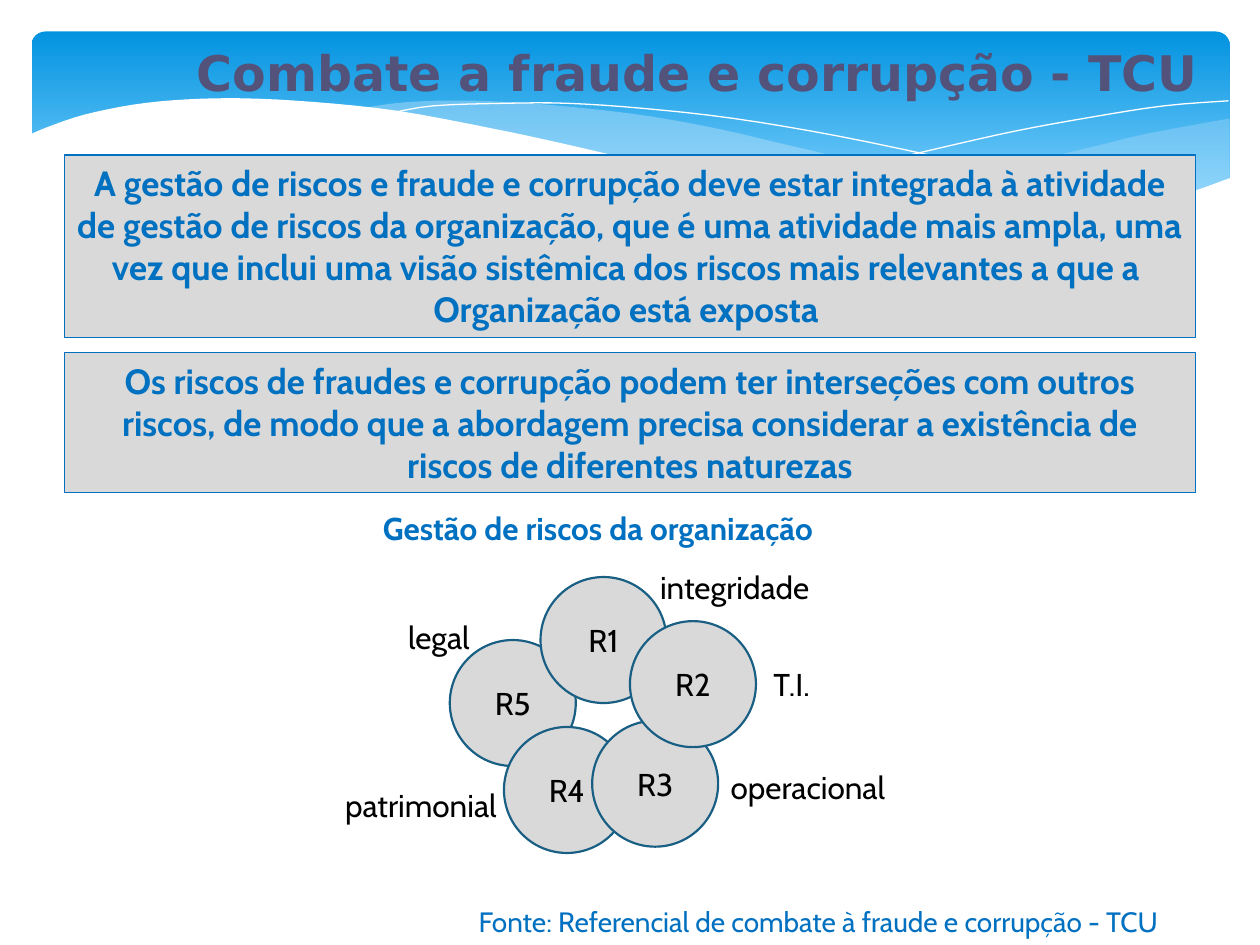
import dataclasses

import lxml.etree
import pptx
import pptx.dml.color
import pptx.enum.shapes
import pptx.enum.text
import pptx.oxml.ns
import pptx.util

Inches = pptx.util.Inches
Pt = pptx.util.Pt
MSO_SHAPE = pptx.enum.shapes.MSO_SHAPE
MSO_ANCHOR = pptx.enum.text.MSO_ANCHOR
MSO_AUTO_SIZE = pptx.enum.text.MSO_AUTO_SIZE
PP_ALIGN = pptx.enum.text.PP_ALIGN


@dataclasses.dataclass(frozen=True)
class Theme:
    title_font: str = "DejaVu Sans"
    body_font: str = "Cabin"
    title: str = "52527A"
    accent: str = "0070C0"
    ink: str = "000000"
    panel: str = "D9D9D9"
    outline: str = "195F84"
    sky: str = "0293E0"
    pale_sky: str = "83D3FE"
    mist: str = "C6E7FC"
    white: str = "FFFFFF"
    title_size: int = 28
    statement_size: int = 20
    label_size: int = 18
    source_size: int = 16


THEME = Theme()

FAR_WAVE = (
    [(8.68, 1.42), (8.12, 1.34), (7.5, 1.24), (6.81, 1.09), (6.04, 0.91), (5.44, 0.77), (4.89, 0.67),
     (4.4, 0.61), (3.95, 0.57), (3.55, 0.55), (3.19, 0.55), (2.88, 0.57), (2.61, 0.61)],
    [(2.61, 0.61), (3.17, 0.69), (3.79, 0.81), (4.24, 0.91), (5.05, 1.1), (5.76, 1.25), (6.4, 1.36),
     (6.97, 1.43), (7.48, 1.47), (7.93, 1.48), (8.32, 1.46), (8.68, 1.42)],
)
NEAR_WAVE = (
    [(9.51, 0.69), (9.23, 0.74), (8.81, 0.82), (8.36, 0.93), (7.8, 1.06), (7.28, 1.18), (6.81, 1.27),
     (6.36, 1.35)],
    [(6.36, 1.35), (6.8, 1.4), (7.2, 1.44), (7.67, 1.47), (8.1, 1.47), (8.47, 1.44), (8.88, 1.37),
     (9.24, 1.27), (9.51, 1.16)],
)
LONG_CREST = [(2.84, 0.65), (3.19, 0.59), (3.76, 0.57), (4.25, 0.57), (4.85, 0.61), (5.57, 0.69),
              (6.4, 0.83), (7.35, 1.03), (8.06, 1.2), (8.82, 1.41)]
SHORT_CREST = [(5.88, 1.26), (6.47, 1.1), (7.23, 0.92), (7.81, 0.79), (8.41, 0.68), (8.99, 0.59),
               (9.5, 0.55)]
WHITE_WAVE = [(-0.02, 0.82), (0.15, 0.75), (0.42, 0.66), (0.81, 0.58), (1.21, 0.54), (1.68, 0.53),
              (2.25, 0.56), (2.91, 0.63), (3.66, 0.77), (4.22, 0.89), (5.04, 1.08), (5.78, 1.24),
              (6.43, 1.35), (7.01, 1.42), (7.68, 1.46), (8.25, 1.45), (8.74, 1.39), (9.15, 1.29),
              (9.52, 1.16)]
WHITE_BASE = [(9.52, 1.99), (-0.02, 1.99)]


def rgb(code):
    return pptx.dml.color.RGBColor.from_string(code)


def smooth(knots, steps=4):
    padded = [knots[0], *knots, knots[-1]]
    curve = [knots[0]]
    for before, start, end, after in zip(padded, padded[1:], padded[2:], padded[3:]):
        for step in range(1, steps + 1):
            t = step / steps
            curve.append(tuple(
                0.5 * (2 * b + (c - a) * t + (2 * a - 5 * b + 4 * c - d) * t ** 2
                       + (3 * b - a - 3 * c + d) * t ** 3)
                for a, b, c, d in zip(before, start, end, after)))
    return curve


def paint(shape, fill=None, line=None, width=0):
    shape.shadow.inherit = False
    if fill:
        shape.fill.solid()
        shape.fill.fore_color.rgb = rgb(fill)
    else:
        shape.fill.background()
    if line:
        shape.line.color.rgb = rgb(line)
        shape.line.width = Pt(width)
    else:
        shape.line.fill.background()


def write(shape, text, size, color, bold=False, font=THEME.body_font, align=PP_ALIGN.LEFT,
          anchor=MSO_ANCHOR.TOP, wrap=False, fit=MSO_AUTO_SIZE.SHAPE_TO_FIT_TEXT):
    frame = shape.text_frame
    frame.text = text
    frame.word_wrap = wrap
    frame.auto_size = fit
    frame.vertical_anchor = anchor
    for paragraph in frame.paragraphs:
        paragraph.alignment = align
        for run in paragraph.runs:
            run.font.name = font
            run.font.size = Pt(size)
            run.font.bold = bold
            run.font.color.rgb = rgb(color)


def add_label(slide, box, text, size=THEME.label_size, color=THEME.ink, bold=False):
    label = slide.shapes.add_textbox(*map(Inches, box))
    write(label, text, size, color, bold)


def add_curve(slide, box, points, closed=True, opacity=None, **colors):
    left, top = box[:2]
    (first_x, first_y), *rest = [(Inches(left + x), Inches(top + y)) for x, y in points]
    builder = slide.shapes.build_freeform(first_x, first_y)
    builder.add_line_segments(rest, close=closed)
    curve = builder.convert_to_shape()
    paint(curve, **colors)
    if opacity:
        color = curve.element.spPr.find(".//" + pptx.oxml.ns.qn("a:srgbClr"))
        lxml.etree.SubElement(color, pptx.oxml.ns.qn("a:alpha"), val=str(opacity * 1000))


def add_banner(slide, box):
    sky = slide.shapes.add_shape(MSO_SHAPE.ROUNDED_RECTANGLE, *map(Inches, box))
    sky.adjustments[0] = 0.071
    paint(sky)
    sky.fill.gradient()
    sky.fill.gradient_angle = 270
    for stop, position, color in zip(sky.fill.gradient_stops, (0, 0.9), (THEME.sky, THEME.pale_sky)):
        stop.position = position
        stop.color.rgb = rgb(color)
    for (upper, lower), opacity in ((NEAR_WAVE, 29), (FAR_WAVE, 40)):
        add_curve(slide, box, smooth(upper) + smooth(lower), opacity=opacity, fill=THEME.mist)
    for crest in (LONG_CREST, SHORT_CREST):
        add_curve(slide, box, smooth(crest), closed=False, line=THEME.white)
    add_curve(slide, box, smooth(WHITE_WAVE) + WHITE_BASE, fill=THEME.white)


def add_title(slide, box, text):
    title = slide.shapes.title
    title.element.getparent().append(title.element)
    title.left, title.top, title.width, title.height = map(Inches, box)
    write(title, text, THEME.title_size, THEME.title, bold=True, font=THEME.title_font)
    title.text_frame.margin_right = Inches(0)


def add_statement(slide, box, text, wrap):
    statement = slide.shapes.add_shape(MSO_SHAPE.RECTANGLE, *map(Inches, box))
    paint(statement, THEME.panel, THEME.accent, 0.75)
    write(statement, text, THEME.statement_size, THEME.accent, bold=True, align=PP_ALIGN.CENTER, wrap=wrap)


def add_risk_ring(slide, box):
    left, top = box[:2]
    diameter = 1
    risks = [("R5", 0.93, 1.09), ("R4", 1.36, 1.78), ("R1", 1.65, 0.59), ("R3", 2.06, 1.73),
             ("R2", 2.36, 0.94)]
    for name, x, y in risks:
        risk = slide.shapes.add_shape(
            MSO_SHAPE.OVAL, *map(Inches, (left + x, top + y, diameter, diameter)))
        paint(risk, THEME.panel, THEME.outline, 1.25)
        write(risk, name, THEME.label_size, THEME.ink, align=PP_ALIGN.CENTER, anchor=MSO_ANCHOR.MIDDLE,
              wrap=True, fit=MSO_AUTO_SIZE.NONE)
    add_label(slide, (left + 0.3, top, 3.63, 0.4), "Gestão de riscos da organização",
              color=THEME.accent, bold=True)
    natures = [("integridade", 2.5, 0.47, 1.43), ("T.I.", 3.4, 1.24, 0.53), ("operacional", 3.06, 2.06, 1.45),
               ("patrimonial", 0, 2.2, 1.42), ("legal", 0.5, 0.87, 0.71)]
    for nature, x, y, width in natures:
        add_label(slide, (left + x, top + y, width, 0.4), nature)


def main():
    deck = pptx.Presentation()
    deck.slide_width, deck.slide_height = Inches(10), Inches(7.5)
    slide = deck.slides.add_slide(deck.slide_layouts.get_by_name("Title Only"))
    add_banner(slide, (0.25, 0.25, 9.51, 1.56))
    add_title(slide, (1.46, 0.29, 8.2, 0.57), "Combate a fraude e corrupção - TCU")
    add_statement(
        slide, (0.51, 1.23, 8.98, 1.45),
        "A gestão de riscos e fraude e corrupção deve estar integrada à atividade\n"
        "de gestão de riscos da organização, que é uma atividade mais ampla, uma\n"
        "vez que inclui uma visão sistêmica dos riscos mais relevantes a que a \n"
        "Organização está exposta ", wrap=False)
    add_statement(
        slide, (0.51, 2.8, 8.98, 1.11),
        "Os riscos de fraudes e corrupção podem ter interseções com outros riscos, de modo que a "
        "abordagem precisa considerar a existência de riscos de diferentes naturezas", wrap=True)
    add_risk_ring(slide, (2.64, 3.99, 4.51, 2.78))
    add_label(slide, (3.7, 7.13, 5.72, 0.37), "Fonte: Referencial de combate à fraude e corrupção - TCU",
              THEME.source_size, THEME.accent)
    deck.save("out.pptx")


if __name__ == "__main__":
    main()
